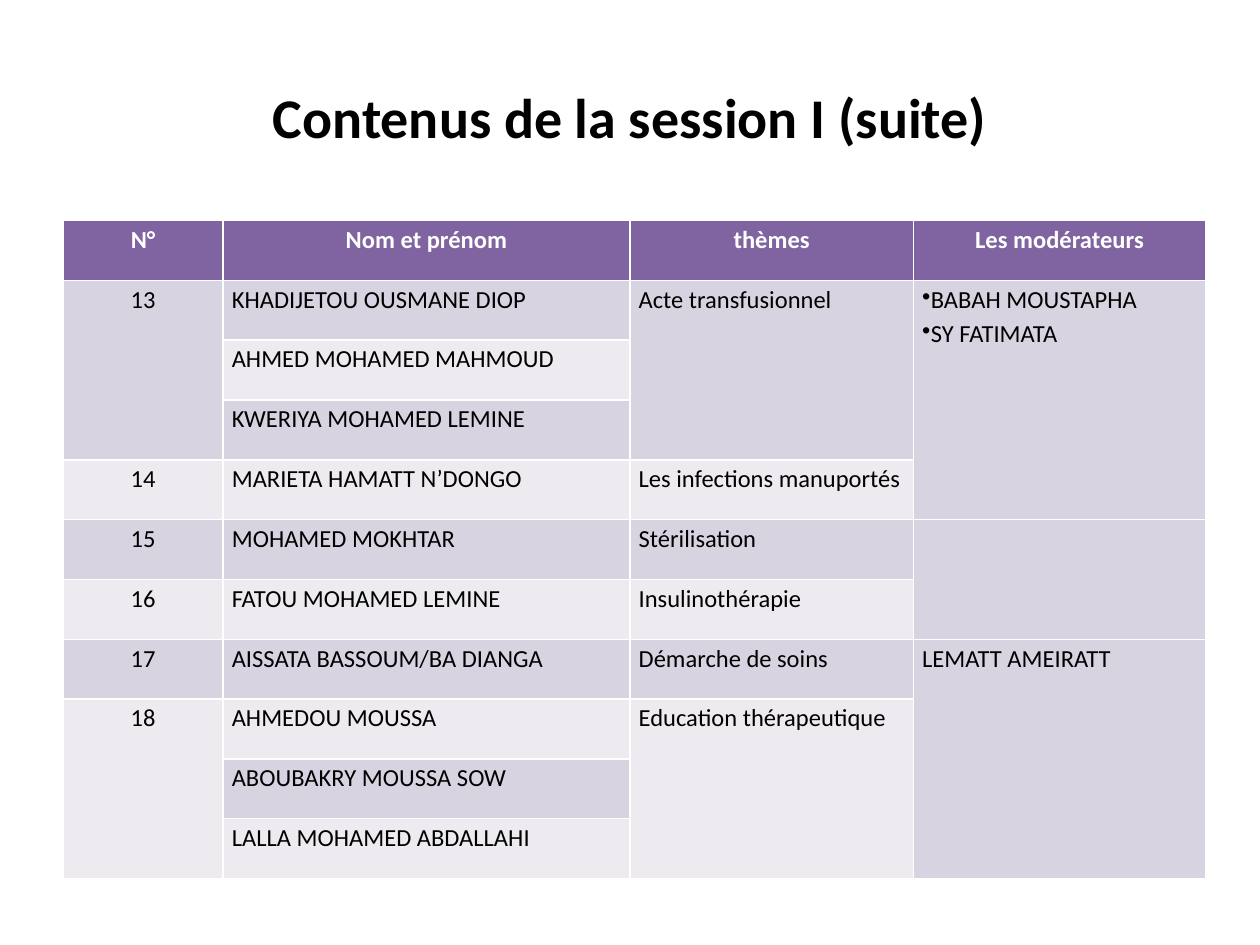
from dataclasses import dataclass

from lxml.etree import SubElement
from pptx import Presentation
from pptx.dml.color import RGBColor as RGB
from pptx.enum.text import MSO_ANCHOR as Anchor, PP_ALIGN as Align
from pptx.oxml.ns import qn
from pptx.util import Pt


@dataclass(frozen=True)
class Theme:
    font: str = "Calibri"
    title_size: int = 32
    cell_size: int = 14
    text: RGB = RGB(0, 0, 0)
    header_text: RGB = RGB(255, 255, 255)
    header: RGB = RGB.from_string("8064A2")
    bands: tuple = (RGB.from_string("D8D3E0"), RGB.from_string("EDEAF0"))


THEME = Theme()
TITLE = "Contenus de la session I (suite)"
HEADERS = ["N°", "Nom et prénom", "thèmes", "Les modérateurs"]
TALKS = [
    ("13", ["KHADIJETOU OUSMANE DIOP", "AHMED MOHAMED MAHMOUD",
            "KWERIYA MOHAMED LEMINE"], "Acte transfusionnel"),
    ("14", ["MARIETA HAMATT N’DONGO"], "Les infections manuportés"),
    ("15", ["MOHAMED MOKHTAR"], "Stérilisation"),
    ("16", ["FATOU MOHAMED LEMINE"], "Insulinothérapie"),
    ("17", ["AISSATA BASSOUM/BA DIANGA"], "Démarche de soins"),
    ("18", ["AHMEDOU MOUSSA", "ABOUBAKRY MOUSSA SOW",
            "LALLA MOHAMED ABDALLAHI"], "Education thérapeutique"),
]
MODERATORS = [(4, ["BABAH MOUSTAPHA", "SY FATIMATA"]), (2, []), (4, ["LEMATT AMEIRATT"])]
COL_WIDTHS = [91.5, 232.5, 162, 167]
ROW_HEIGHT = 34.2
LEFT, TOP = 36, 126


def add_run(p, text, size, color, bold=False):
    r = p.add_run()
    r.text = text
    r.font.name, r.font.size, r.font.bold = THEME.font, Pt(size), bold
    r.font.color.rgb = color


def write_cell(cell, lines, align=Align.LEFT, color=THEME.text, bold=False):
    cell.margin_left = cell.margin_right = Pt(5)
    cell.margin_top = cell.margin_bottom = 0
    tf = cell.text_frame
    for i, line in enumerate(lines):
        p = tf.paragraphs[0] if i == 0 else tf.add_paragraph()
        p.alignment, p.line_spacing = align, 1.15
        add_run(p, line, THEME.cell_size, color, bold)
        if len(lines) > 1:
            SubElement(p._p.get_or_add_pPr(), qn("a:buChar"), char="•")


def write_span(table, row, col, span, lines, align=Align.LEFT):
    cell = table.cell(row, col)
    if span > 1:
        cell.merge(table.cell(row + span - 1, col))
    write_cell(cell, lines, align)


def add_title(s):
    sp = s.shapes.title
    sp.left, sp.top, sp.width, sp.height = Pt(36), Pt(21.6), Pt(648), Pt(90)
    tf = sp.text_frame
    tf.vertical_anchor = Anchor.MIDDLE
    p = tf.paragraphs[0]
    p.alignment = Align.CENTER
    add_run(p, TITLE, THEME.title_size, THEME.text, True)


def add_programme(s):
    rows = 1 + sum(len(names) for _, names, _ in TALKS)
    table = s.shapes.add_table(rows, len(HEADERS), Pt(LEFT), Pt(TOP),
                               Pt(sum(COL_WIDTHS)), Pt(rows * ROW_HEIGHT)).table
    for column, width in zip(table.columns, COL_WIDTHS):
        column.width = Pt(width)
    for i, row in enumerate(table.rows):
        row.height = Pt(ROW_HEIGHT)
        for cell in row.cells:
            cell.fill.solid()
            cell.fill.fore_color.rgb = THEME.bands[(i - 1) % 2] if i else THEME.header
    for col, header in enumerate(HEADERS):
        write_cell(table.cell(0, col), [header], Align.CENTER, THEME.header_text, True)

    row = 1
    for number, names, topic in TALKS:
        write_span(table, row, 0, len(names), [number], Align.CENTER)
        write_span(table, row, 2, len(names), [topic])
        for name in names:
            write_cell(table.cell(row, 1), [name])
            row += 1

    row = 1
    for span, people in MODERATORS:
        write_span(table, row, 3, span, people)
        row += span


def main():
    prs = Presentation()
    prs.slide_width, prs.slide_height = Pt(720), Pt(540)
    s = prs.slides.add_slide(prs.slide_layouts[5])
    add_title(s)
    add_programme(s)
    prs.save("out.pptx")


if __name__ == "__main__":
    main()
